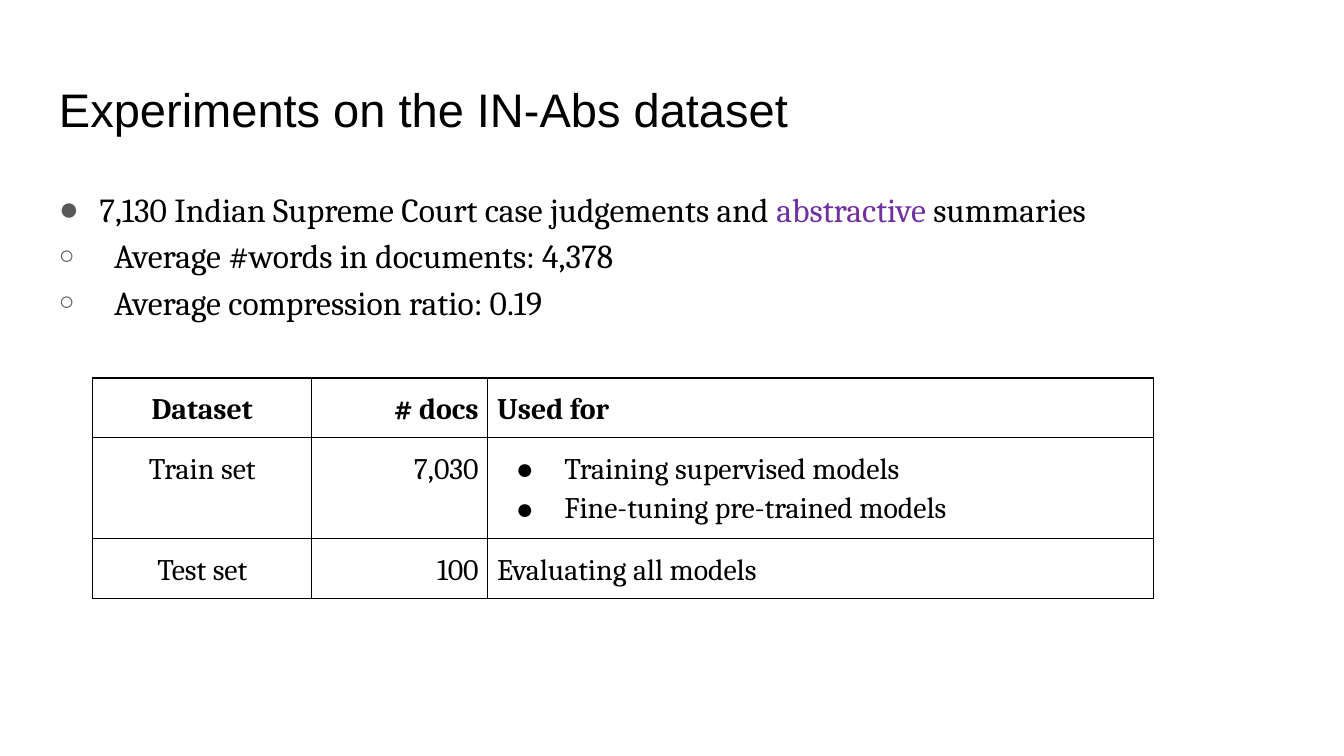
from dataclasses import dataclass
from typing import Optional

from lxml import etree
from pptx import Presentation
from pptx.dml.color import RGBColor
from pptx.enum import text as t
from pptx.oxml import ns
from pptx.util import Pt

BLACK = RGBColor(0x00, 0x00, 0x00)
GRAY = RGBColor(0x59, 0x59, 0x59)
PURPLE = RGBColor(0x70, 0x30, 0xA0)
LEFT, CENTER, RIGHT = t.PP_ALIGN.LEFT, t.PP_ALIGN.CENTER, t.PP_ALIGN.RIGHT
LINE_SPACING = 1.15
CELL_INSET = Pt(5)


@dataclass(frozen=True)
class Bullet:
    char: str
    color: RGBColor
    margin: float
    hang: float
    percent: int = 100


@dataclass(frozen=True)
class Fact:
    bullet: Bullet
    phrases: tuple[tuple[str, RGBColor], ...]


@dataclass(frozen=True)
class Column:
    width: float
    align: t.PP_ALIGN


@dataclass(frozen=True)
class Row:
    height: float
    cells: tuple[tuple[str, ...], ...]
    bold: bool = False


MAIN = Bullet("●", GRAY, 21.6, 21.6)
SUB = Bullet("○", GRAY, 29.5, 29.5, 78)
USE = Bullet("●", BLACK, 36, 26)

FACTS = (
    Fact(MAIN, (("7,130 Indian Supreme Court case judgements and ", BLACK),
                ("abstractive", PURPLE), (" summaries", BLACK))),
    Fact(SUB, (("Average #words in documents: 4,378", BLACK),)),
    Fact(SUB, (("Average compression ratio: 0.19", BLACK),)),
)
COLUMNS = (Column(117.4, CENTER), Column(94.3, RIGHT), Column(356.4, LEFT))
ROWS = (
    Row(31.2, (("Dataset",), ("# docs",), ("Used for",)), bold=True),
    Row(52, (("Train set",), ("7,030",),
             ("Training supervised models", "Fine-tuning pre-trained models"))),
    Row(31.2, (("Test set",), ("100",), ("Evaluating all models",))),
)


def add_child(parent, tag: str, **attributes: str):
    return etree.SubElement(parent, ns.qn(tag), attributes)


def set_bullet(paragraph, bullet: Bullet) -> None:
    props = paragraph._p.get_or_add_pPr()
    props.set("marL", str(Pt(bullet.margin)))
    props.set("indent", str(-Pt(bullet.hang)))
    add_child(add_child(props, "a:buClr"), "a:srgbClr", val=str(bullet.color))
    add_child(props, "a:buSzPct", val=str(bullet.percent * 1000))
    add_child(props, "a:buFont", typeface="Arial")
    add_child(props, "a:buChar", char=bullet.char)


def set_font(font, name: str, size: float, bold: bool = False) -> None:
    font.name, font.size, font.bold = name, Pt(size), bold
    font.color.rgb = BLACK


def next_paragraph(frame, index: int):
    return frame.add_paragraph() if index else frame.paragraphs[0]


def add_frame(slide, top: float, height: float, anchor: t.MSO_ANCHOR):
    frame = slide.shapes.add_textbox(Pt(24.5), Pt(top), Pt(671), Pt(height)).text_frame
    frame.word_wrap = True
    frame.vertical_anchor = anchor
    frame.margin_left = frame.margin_right = Pt(7.2)
    frame.margin_top = frame.margin_bottom = Pt(7.2)
    return frame


def add_facts(slide, facts: tuple[Fact, ...]) -> None:
    frame = add_frame(slide, 90.7, 269.3, t.MSO_ANCHOR.TOP)
    for index, fact in enumerate(facts):
        line = next_paragraph(frame, index)
        set_bullet(line, fact.bullet)
        line.line_spacing = LINE_SPACING
        set_font(line.font, "Cambria", 18)
        for words, color in fact.phrases:
            run = line.add_run()
            run.text = words
            if color != BLACK:
                run.font.color.rgb = color


def set_borders(cell) -> None:
    props = cell._tc.get_or_add_tcPr()
    for side in ("a:lnL", "a:lnR", "a:lnT", "a:lnB"):
        border = add_child(props, side, w=str(Pt(0.68)))
        add_child(add_child(border, "a:solidFill"), "a:srgbClr", val=str(BLACK))


def fill_cell(cell, lines: tuple[str, ...], align: t.PP_ALIGN, bold: bool) -> None:
    set_borders(cell)
    cell.fill.background()
    cell.margin_left = cell.margin_right = CELL_INSET
    cell.margin_top = cell.margin_bottom = CELL_INSET
    bullet: Optional[Bullet] = USE if len(lines) > 1 else None
    for index, words in enumerate(lines):
        line = next_paragraph(cell.text_frame, index)
        if bullet:
            set_bullet(line, bullet)
        line.text = words
        line.alignment = align
        line.line_spacing = LINE_SPACING
        set_font(line.font, "Cambria", 16, bold)


def add_splits(slide, columns: tuple[Column, ...], rows: tuple[Row, ...]) -> None:
    width = sum(column.width for column in columns)
    height = sum(row.height for row in rows)
    splits = slide.shapes.add_table(len(rows), len(columns), Pt(49.7), Pt(202.5),
                                    Pt(width), Pt(height)).table
    splits.first_row = splits.horz_banding = False
    for index, column in enumerate(columns):
        splits.columns[index].width = Pt(column.width)
    for r, row in enumerate(rows):
        splits.rows[r].height = Pt(row.height)
        for c, (column, lines) in enumerate(zip(columns, row.cells)):
            fill_cell(splits.cell(r, c), lines, column.align, row.bold)


def main() -> None:
    deck = Presentation()
    deck.slide_width, deck.slide_height = Pt(720), Pt(405)
    slide = deck.slides.add_slide(deck.slide_layouts[6])
    title = add_frame(slide, 35.3, 45.4, t.MSO_ANCHOR.MIDDLE).paragraphs[0]
    title.text = "Experiments on the IN-Abs dataset"
    set_font(title.font, "Arial", 25.2)
    add_facts(slide, FACTS)
    add_splits(slide, COLUMNS, ROWS)
    deck.save("out.pptx")


if __name__ == "__main__":
    main()
